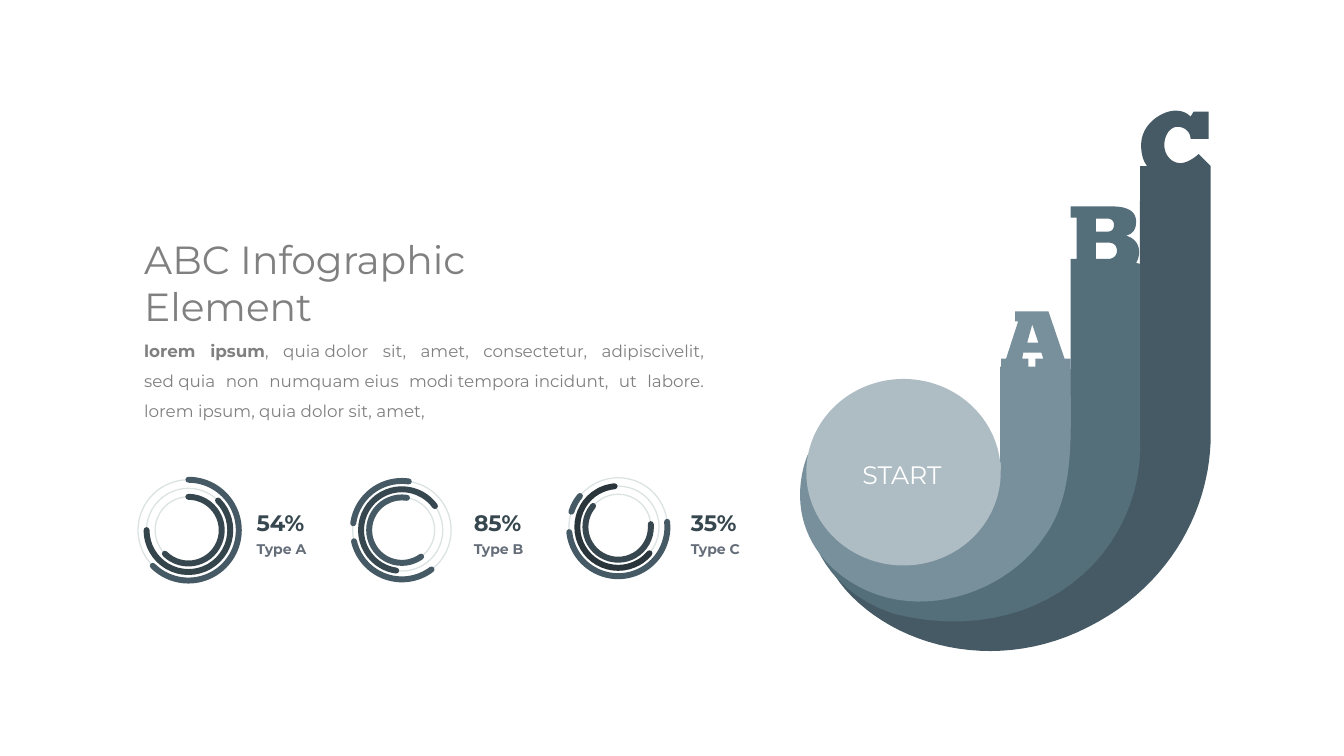
from dataclasses import dataclass

from lxml import etree
from pptx import Presentation
from pptx.dml.color import RGBColor
from pptx.enum import shapes, text
from pptx.oxml import ns
from pptx.util import Cm, Pt


@dataclass(frozen=True)
class Theme:
    font: str = "Montserrat"
    grey: str = "808080"
    label: str = "656D78"
    white: str = "FFFFFF"
    track: str = "DAE2E2"
    ball: str = "AEBCC4"
    light: str = "78909C"
    middle: str = "546E7A"
    slate: str = "455A64"
    dark: str = "37474F"
    deep: str = "34444B"
    night: str = "29353B"
    title_size: int = 28
    start_size: int = 18
    value_size: int = 16
    body_size: int = 12
    label_size: int = 10


THEME = Theme()
UNIT = 0.0254  # centimetres in one step of the letter outlines
HARD_SPACE = chr(160)
WIDE_RINGS = 2.54, 2.11, 1.68
SMALL_RINGS = 2.48, 2.06, 1.65
LABEL_LEFT, LABEL_PITCH = 6.47, 5.47

# Value, label, ring centre, ring sizes, arcs as (ring, start degree, end degree, colour)
GAUGES = [
    ("54%", "Type A", (4.75, 13.36), WIDE_RINGS, [
        (0, 270, 135, THEME.slate), (1, 315, 180, THEME.deep), (2, 270, 135, THEME.dark)]),
    ("85%", "Type B", (10.13, 13.36), SMALL_RINGS, [
        (0, 188, 278, THEME.slate), (0, 53, 167, THEME.slate),
        (1, 98, 324, THEME.dark), (2, 54, 279, THEME.slate)]),
    ("35%", "Type C", (15.58, 13.28), SMALL_RINGS, [
        (0, 198, 219, THEME.slate), (0, 354, 174, THEME.slate),
        (1, 40, 265, THEME.night), (2, 355, 220, THEME.dark)]),
]

# Contours of each band: two numbers are a corner, six are a Bézier curve
LETTER_C = [[
    (428, 55), (416, 43), (415, 44, 406, 52, 398, 52), (389, 52, 382, 44, 382, 34),
    (382, 24, 388, 16, 395, 16), (402, 16, 408, 21, 408, 28), (426, 28), (426, 1),
    (411, 1), (408, 6), (407, 5, 403, 0, 393, 0), (380, 0, 359, 13, 359, 34),
    (359, 43, 361, 50, 365, 55), (358, 55), (357, 345), (258, 436), (134, 474),
    (36, 352), (36, 352, 18, 428, 72, 482), (126, 536, 222, 556, 307, 512),
    (392, 469, 428, 390, 428, 322)]]
LETTER_B = [
    [(358, 322), (358, 152), (354, 151), (356, 148, 357, 144, 357, 140),
     (357, 131, 351, 126, 344, 124), (351, 122, 354, 118, 354, 110),
     (354, 100, 346, 95, 330, 95), (289, 95), (289, 106), (295, 106), (295, 147),
     (289, 147), (289, 256), (214, 424), (28, 342), (28, 342, 0, 460, 113, 499),
     (255, 535, 364, 441, 358, 322)],
    [(314, 107), (325, 107), (329, 107, 332, 109, 332, 113),
     (332, 118, 330, 120, 325, 120), (314, 120)],
    [(314, 131), (327, 131), (332, 131, 335, 134, 335, 139),
     (335, 144, 331, 147, 327, 147), (314, 147)]]
LETTER_A = [
    [(289, 254), (289, 246), (283, 246), (267, 199), (234, 199), (234, 209), (237, 209),
     (225, 246), (220, 246), (220, 254), (219, 254), (219, 346),
     (219, 346, 225, 393, 186, 422), (142, 454, 28, 342, 28, 342),
     (28, 342, 0, 404, 53, 454), (119, 514, 220, 485, 262, 424),
     (294, 381, 289, 324, 289, 254)],
    [(251, 212), (257, 230), (246, 230)],
    [(241, 246), (242, 240), (260, 240), (262, 246), (254, 246), (254, 254),
     (247, 254), (247, 246)]]


def write(paragraph, content, *, size, color, bold=False, align=None, spacing=None, before=0):
    """Add a formatted run; a tilde in the content stands for a hard space."""
    run = paragraph.add_run()
    run.text = content.replace("~", HARD_SPACE)
    run.font.name, run.font.size, run.font.bold = THEME.font, Pt(size), bold
    run.font.color.rgb = RGBColor.from_string(color)
    paragraph.alignment = align
    paragraph.line_spacing = spacing
    paragraph.space_before = Pt(before)


def place(shape, left, top, width, height):
    shape.left, shape.top, shape.width, shape.height = map(Cm, (left, top, width, height))
    frame = shape.text_frame
    frame.vertical_anchor = text.MSO_ANCHOR.TOP
    frame.auto_size = text.MSO_AUTO_SIZE.NONE
    frame.word_wrap = True
    return frame.paragraphs[0]


def add_label(slide, content, left, top, width, height, margin=0.0, **style):
    frame = slide.shapes.add_textbox(*map(Cm, (left, top, width, height))).text_frame
    frame.word_wrap = False
    frame.margin_left = frame.margin_right = frame.margin_top = frame.margin_bottom = Cm(margin)
    write(frame.paragraphs[0], content, **style)


def fill_shape(shape, color):
    shape.shadow.inherit = False
    shape.fill.solid()
    shape.fill.fore_color.rgb = RGBColor.from_string(color)
    shape.line.fill.background()


def add_ring(slide, kind, center, size, color, weight):
    x, y = center
    shape = slide.shapes.add_shape(kind, Cm(x - size / 2), Cm(y - size / 2), Cm(size), Cm(size))
    shape.shadow.inherit = False
    shape.fill.background()
    shape.line.color.rgb = RGBColor.from_string(color)
    shape.line.width = Pt(weight)
    return shape


def add_gauge(slide, label_left, value, label, center, sizes, arcs):
    for size in sizes:
        add_ring(slide, shapes.MSO_SHAPE.OVAL, center, size, THEME.track, 0.88)
    for ring, start, end, color in arcs:
        arc = add_ring(slide, shapes.MSO_SHAPE.ARC, center, sizes[ring], color, 4.25)
        for index, angle in enumerate((start, end)):
            arc.adjustments[index] = angle * 0.6
        arc.line._get_or_add_ln().set("cap", "rnd")
    style = dict(bold=True, spacing=0.9, before=7.5)
    add_label(slide, value, label_left, 12.9, 1.7, 0.75,
              size=THEME.value_size, color=THEME.dark, **style)
    add_label(slide, label, label_left, 13.67, 1.7, 0.58,
              size=THEME.label_size, color=THEME.label, **style)


def flatten(contour, steps=24):
    """Turn corners and Bézier curves into one list of points in EMU."""
    points = [contour[0]]
    for part in contour[1:]:
        if len(part) == 2:
            points.append(part)
            continue
        controls = [points[-1], part[:2], part[2:4], part[4:]]
        for step in range(1, steps + 1):
            t = step / steps
            weights = (1 - t) ** 3, 3 * t * (1 - t) ** 2, 3 * t * t * (1 - t), t ** 3
            points.append(tuple(sum(w * c[axis] for w, c in zip(weights, controls))
                                for axis in (0, 1)))
    return [(Cm(x * UNIT), Cm(y * UNIT)) for x, y in points]


def add_band(slide, left, top, contours, color):
    outer, *holes = map(flatten, contours)
    builder = slide.shapes.build_freeform(*outer[0])
    builder.add_line_segments(outer[1:], close=True)
    for hole in holes:
        builder.move_to(*hole[0])
        builder.add_line_segments(hole[1:], close=True)
    fill_shape(builder.convert_to_shape(Cm(left), Cm(top)), color)


def add_abc_figure(slide, left, top):
    for contours, color in ((LETTER_C, THEME.slate), (LETTER_B, THEME.middle),
                            (LETTER_A, THEME.light)):
        add_band(slide, left, top, contours, color)
    ball = slide.shapes.add_shape(shapes.MSO_SHAPE.OVAL, Cm(left + 0.68), Cm(top + 6.76),
                                  Cm(4.9), Cm(4.7))
    fill_shape(ball, THEME.ball)
    add_label(slide, "START", left + 1.79, top + 8.59, 2.6, 1.02, margin=0.2,
              size=THEME.start_size, color=THEME.white, align=text.PP_ALIGN.CENTER)


def add_heading(slide, left, top):
    title, body = slide.placeholders
    write(place(title, left, top, 13, 2.6), "ABC Infographic Element",
          size=THEME.title_size, color=THEME.grey, align=text.PP_ALIGN.LEFT)
    paragraph = place(body, left, top + 2.41, 14.63, 2.5)
    style = dict(size=THEME.body_size, color=THEME.grey,
                 align=text.PP_ALIGN.JUSTIFY, spacing=1.5)
    write(paragraph, "lorem ipsum", bold=True, **style)
    write(paragraph, ", quia~dolor sit, amet, consectetur, adipiscivelit, sed~quia non "
          "numquam~eius modi~tempora~incidunt, ut labore. lorem ipsum, "
          "quia~dolor sit, amet,", **style)
    properties = paragraph._p.get_or_add_pPr()
    properties.set("marL", "0")
    properties.set("indent", "0")
    etree.SubElement(properties, ns.qn("a:buNone"))


def main():
    presentation = Presentation()
    presentation.slide_width, presentation.slide_height = Cm(33.87), Cm(19.05)
    slide = presentation.slides.add_slide(presentation.slide_layouts[1])
    add_heading(slide, 3.38, 5.79)
    add_abc_figure(slide, 19.64, 2.79)
    for index, gauge in enumerate(GAUGES):
        add_gauge(slide, LABEL_LEFT + index * LABEL_PITCH, *gauge)
    presentation.save("out.pptx")


if __name__ == "__main__":
    main()
